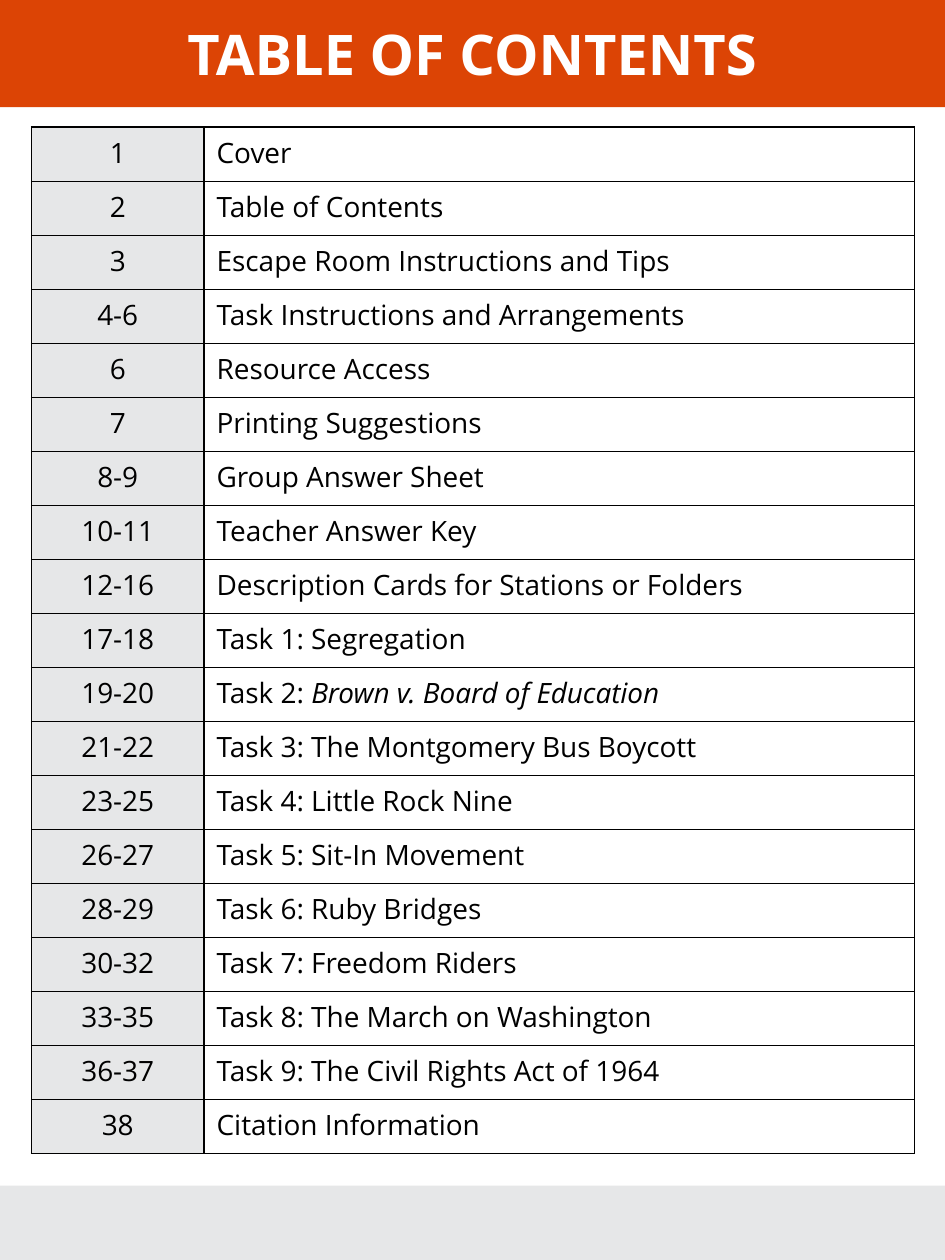
from pptx import Presentation
from pptx.dml.color import RGBColor
from pptx.enum.shapes import MSO_SHAPE
from pptx.enum.text import MSO_ANCHOR, PP_ALIGN
from pptx.oxml import parse_xml
from pptx.oxml.ns import nsdecls
from pptx.util import Pt

WIDE, HIGH = 540, 720
FONT = "Open Sans"
HUES = {"band": "DC4405", "gray": "E6E7E8", "white": "FFFFFF", "black": "000000"}

# Pages and the runs of each entry; every second run is italic
ITEMS = [
    ("1", ["Cover"]),
    ("2", ["Table of Contents"]),
    ("3", ["Escape Room Instructions and Tips"]),
    ("4-6", ["Task Instructions and Arrangements"]),
    ("6", ["Resource Access"]),
    ("7", ["Printing Suggestions"]),
    ("8-9", ["Group Answer Sheet"]),
    ("10-11", ["Teacher Answer Key"]),
    ("12-16", ["Description Cards for Stations or Folders"]),
    ("17-18", ["Task 1: Segregation"]),
    ("19-20", ["Task 2: ", "Brown v. Board of Education"]),
    ("21-22", ["Task 3: The Montgomery Bus Boycott"]),
    ("23-25", ["Task 4: Little Rock Nine"]),
    ("26-27", ["Task 5: Sit-In Movement"]),
    ("28-29", ["Task 6: Ruby Bridges"]),
    ("30-32", ["Task 7: Freedom Riders"]),
    ("33-35", ["Task 8: The March on Washington"]),
    ("36-37", ["Task 9: The Civil Rights Act of 1964"]),
    ("38", ["Citation Information"]),
]


def paint(fill, hue):
    fill.solid()
    fill.fore_color.rgb = RGBColor.from_string(HUES[hue])


def style(par, size, hue, align, bold=False):
    par.alignment = align
    font = par.font
    font.name, font.size, font.bold = FONT, Pt(size), bold
    font.color.rgb = RGBColor.from_string(HUES[hue])


def border(cell, width=1):
    props = cell._tc.get_or_add_tcPr()
    for side in ("lnL", "lnR", "lnT", "lnB"):
        props.append(parse_xml(
            f'<a:{side} {nsdecls("a")} w="{Pt(width)}"><a:solidFill>'
            f'<a:srgbClr val="{HUES["black"]}"/></a:solidFill></a:{side}>'))


def add_foot(slide, box):
    foot = slide.shapes.add_shape(MSO_SHAPE.RECTANGLE, *map(Pt, box))
    foot.shadow.inherit = False
    paint(foot.fill, "gray")
    foot.line.fill.background()


def add_title(slide, box):
    title = slide.shapes.title
    title.left, title.top, title.width, title.height = map(Pt, box)
    paint(title.fill, "band")
    frame = title.text_frame
    frame.text = "TABLE OF CONTENTS"
    frame.vertical_anchor = MSO_ANCHOR.MIDDLE
    style(frame.paragraphs[0], 32, "white", PP_ALIGN.CENTER, True)


def add_list(slide, box, first):
    left, top, width, height = box
    table = slide.shapes.add_table(len(ITEMS), 2, *map(Pt, box)).table
    table.columns[0].width = Pt(first)
    table.columns[1].width = Pt(width - first)
    looks = [("gray", PP_ALIGN.CENTER), ("white", PP_ALIGN.LEFT)]
    for row, (pages, parts) in zip(table.rows, ITEMS):
        row.height = Pt(height / len(ITEMS))
        for cell, texts, (hue, align) in zip(row.cells, ([pages], parts), looks):
            border(cell)
            paint(cell.fill, hue)
            par = cell.text_frame.paragraphs[0]
            for i, text in enumerate(texts):
                run = par.add_run()
                run.text = text
                if i % 2:
                    run.font.italic = True
            style(par, 16, "black", align)


def main():
    deck = Presentation()
    deck.slide_width, deck.slide_height = Pt(WIDE), Pt(HIGH)
    slide = deck.slides.add_slide(deck.slide_layouts[5])
    paint(slide.background.fill, "white")
    # Footer band, title band, contents table
    add_foot(slide, (0, 677.5, WIDE, HIGH - 677.5))
    add_title(slide, (0, 0, WIDE, 61.2))
    add_list(slide, (18, 72.7, 504.7, 586.6), 98.6)
    deck.save("out.pptx")


if __name__ == "__main__":
    main()
